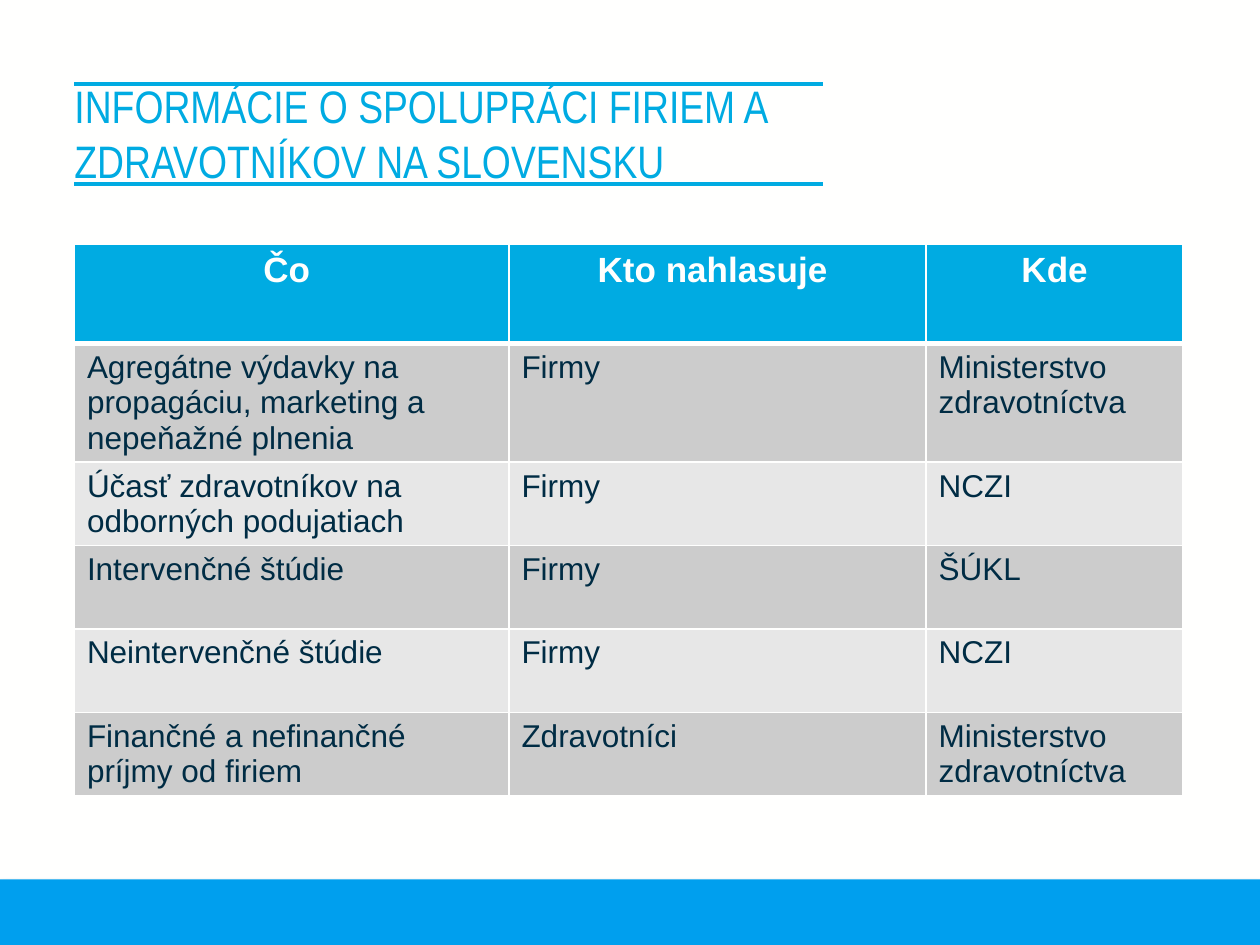
import pptx
import pptx.util
import pptx.dml.color
import pptx.enum.shapes
import pptx.enum.text
import pptx.oxml
import pptx.oxml.ns

Cm = pptx.util.Cm
Pt = pptx.util.Pt

TITLE = "INFORMÁCIE O SPOLUPRÁCI FIRIEM A ZDRAVOTNÍKOV NA SLOVENSKU"
ROWS = [
    ("Čo ", "Kto nahlasuje ", "Kde"),
    ("Agregátne výdavky na propagáciu, marketing a nepeňažné plnenia",
     "Firmy", "Ministerstvo zdravotníctva"),
    ("Účasť zdravotníkov na odborných podujatiach", "Firmy", "NCZI"),
    ("Intervenčné štúdie", "Firmy", "ŠÚKL"),
    ("Neintervenčné štúdie", "Firmy", "NCZI"),
    ("Finančné a nefinančné príjmy od firiem",
     "Zdravotníci", "Ministerstvo zdravotníctva"),
]
WIDTHS = [8.76, 8.41, 5.18]
HEIGHTS = [2, 2.35] + [1.68] * 4
COLORS = {"paper": "FFFFFE", "bar": "009FEE", "blue": "00ABE2",
          "ink": "002C44", "dark": "CCCCCC", "light": "E7E7E7"}
LEFT = 1.5
SPACE = pptx.oxml.ns.nsdecls("a")


def color(name):
    return pptx.dml.color.RGBColor.from_string(COLORS[name])


def paint(fill, name):
    fill.solid()
    fill.fore_color.rgb = color(name)


def style(font, face, size, name, bold=False):
    font.name, font.size, font.bold = face, Pt(size), bold
    font.color.rgb = color(name)


def effect(shape, body=""):
    shape._element.spPr.append(pptx.oxml.parse_xml(
        f"<a:effectLst {SPACE}>{body}</a:effectLst>"))


def border(cell, row):
    sides = {"L": 1, "R": 1, "T": 3 if row == 1 else 1, "B": 3 if row == 0 else 1}
    props = cell._tc.get_or_add_tcPr()
    for spot, (side, width) in enumerate(sides.items()):
        props.insert(spot, pptx.oxml.parse_xml(
            f'<a:ln{side} {SPACE} w="{Pt(width)}"><a:solidFill>'
            f'<a:srgbClr val="{COLORS["paper"]}"/></a:solidFill></a:ln{side}>'))


def add_bar(slide):
    bar = slide.shapes.add_shape(
        pptx.enum.shapes.MSO_SHAPE.RECTANGLE, 0, Cm(17.73), Cm(25.4), Cm(1.32))
    paint(bar.fill, "bar")
    bar.line.fill.background()
    effect(bar, f'<a:outerShdw blurRad="{Pt(3.1)}" dist="{Pt(1.8)}" dir="5400000" '
                'rotWithShape="0"><a:srgbClr val="000000"><a:alpha val="35000"/>'
                '</a:srgbClr></a:outerShdw>')


def add_rules(slide):
    for top in (1.69, 3.71):
        rule = slide.shapes.add_connector(
            pptx.enum.shapes.MSO_CONNECTOR.STRAIGHT,
            Cm(LEFT), Cm(top), Cm(16.6), Cm(top))
        rule.line.color.rgb = color("blue")
        rule.line.width = Pt(2)
        effect(rule)


def set_title(slide):
    title = slide.shapes.title
    title.left, title.top, title.width, title.height = map(Cm, (LEFT, 1.57, 17.6, 2.21))
    frame = title.text_frame
    frame.text = TITLE
    frame.word_wrap = True
    frame.auto_size = pptx.enum.text.MSO_AUTO_SIZE.NONE
    frame.vertical_anchor = pptx.enum.text.MSO_ANCHOR.MIDDLE
    frame.margin_left = frame.margin_right = frame.margin_top = frame.margin_bottom = 0
    para = frame.paragraphs[0]
    para.alignment = pptx.enum.text.PP_ALIGN.LEFT
    style(para.font, "Arial Narrow", 26, "blue")


def add_grid(slide):
    grid = slide.shapes.add_table(
        len(ROWS), len(WIDTHS), Cm(LEFT), Cm(4.93),
        Cm(sum(WIDTHS)), Cm(sum(HEIGHTS))).table
    for col, width in zip(grid.columns, WIDTHS):
        col.width = Cm(width)
    for row, texts in enumerate(ROWS):
        grid.rows[row].height = Cm(HEIGHTS[row])
        for col, text in enumerate(texts):
            cell = grid.cell(row, col)
            cell.text = text
            para = cell.text_frame.paragraphs[0]
            if row == 0:
                para.alignment = pptx.enum.text.PP_ALIGN.CENTER
                style(para.font, "Arial", 20, "paper", True)
                paint(cell.fill, "blue")
            else:
                style(para.font, "Arial", 18, "ink")
                paint(cell.fill, "dark" if row % 2 else "light")
            border(cell, row)


def main():
    deck = pptx.Presentation()
    deck.slide_width, deck.slide_height = Cm(25.4), Cm(19.05)
    slide = deck.slides.add_slide(deck.slide_layouts[5])
    paint(slide.background.fill, "paper")
    add_bar(slide)
    add_rules(slide)
    set_title(slide)
    add_grid(slide)
    deck.save("out.pptx")


if __name__ == "__main__":
    main()
